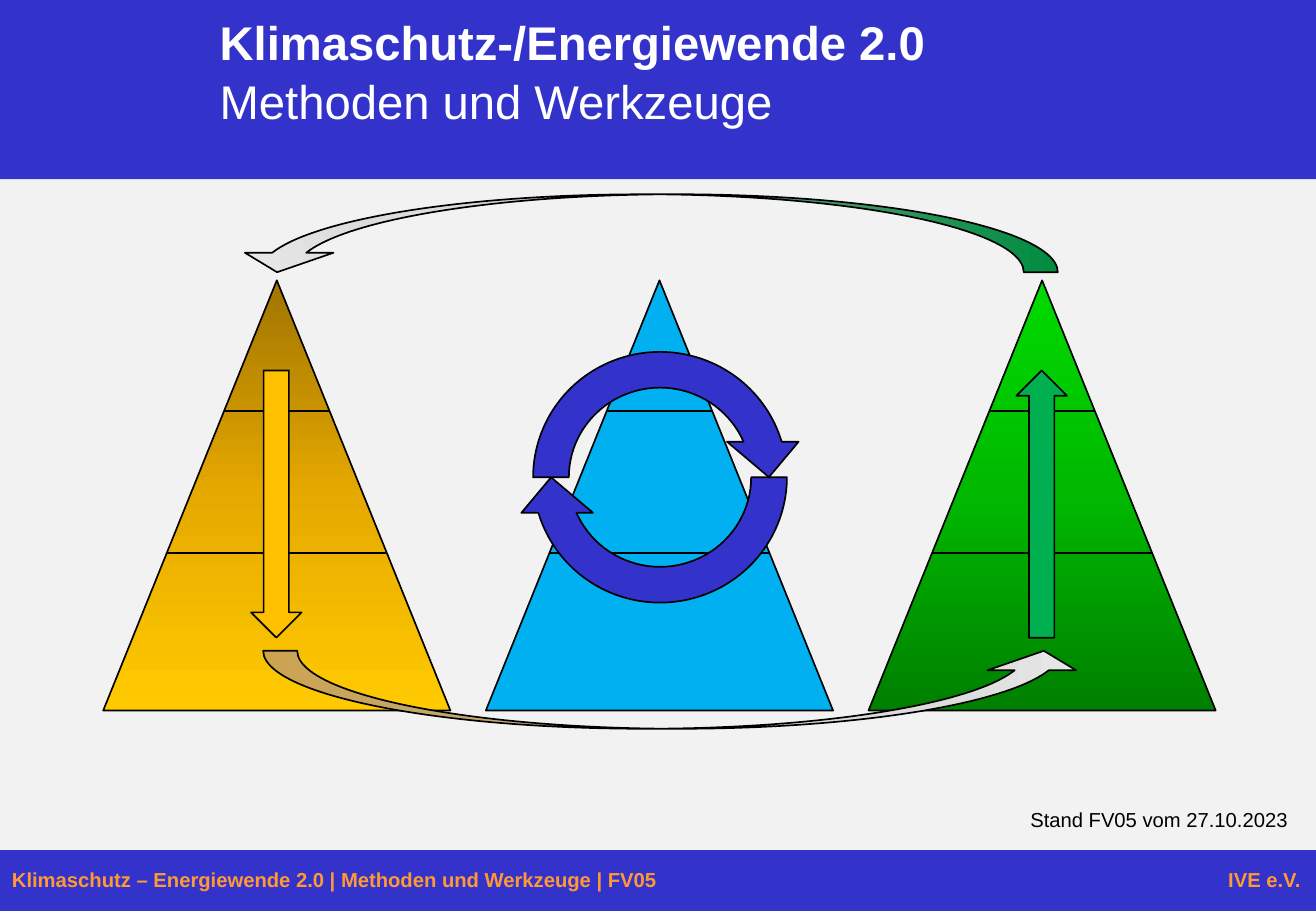
"""Build the title slide on methods and tools for the energy transition."""
from copy import deepcopy
from dataclasses import dataclass

from lxml import etree
from pptx import Presentation
from pptx.dml.color import RGBColor
from pptx.enum.shapes import MSO_CONNECTOR, MSO_SHAPE
from pptx.enum.text import MSO_ANCHOR, PP_ALIGN
from pptx.oxml.ns import qn
from pptx.util import Emu, Pt

EMU_PER_PX = 7620
PAGE_WIDTH, PAGE_HEIGHT = 1300, 900
TITLE_ONLY = 5

RECTANGLE = MSO_SHAPE.RECTANGLE
TRIANGLE = MSO_SHAPE.ISOSCELES_TRIANGLE
DOWN_ARROW = MSO_SHAPE.DOWN_ARROW
CIRCULAR_ARROW = MSO_SHAPE.CIRCULAR_ARROW
CURVED_ARROW = MSO_SHAPE.CURVED_UP_ARROW
STRAIGHT = MSO_CONNECTOR.STRAIGHT
TOP = MSO_ANCHOR.TOP
LEFT = PP_ALIGN.LEFT


@dataclass(frozen=True)
class Gradient:
    """Stops as (percent, colour) and a clockwise angle."""
    stops: tuple[tuple[int, str], ...]
    angle: int = 0


Fill = str | Gradient
SILVER = ((74, "DCDCDC"), (83, "DCDCDC"), (100, "E8E8E8"))


@dataclass(frozen=True)
class Theme:
    """Colours, font and type sizes of the slide."""
    font: str = "Arial"
    title_size: int = 28
    small_size: int = 12
    band: str = "3333CC"
    body: str = "F2F2F2"
    white: str = "FFFFFF"
    black: str = "000000"
    orange: str = "FF9933"
    blue: str = "00B0F0"
    yellow_arrow: str = "FFC000"
    green_arrow: str = "00B050"
    gold: Gradient = Gradient(((0, "A07400"), (50, "E6A900"), (100, "FFCA00")), 90)
    green: Gradient = Gradient(((0, "007F00"), (50, "00B800"), (100, "00DB00")), 270)
    lower_curve: Gradient = Gradient(((0, "FFCC66"), *SILVER))
    upper_curve: Gradient = Gradient(((0, "00B050"), *SILVER))


THEME = Theme()


@dataclass(frozen=True)
class Box:
    """A rectangle in px."""
    left: int
    top: int
    width: int
    height: int

    def emu(self) -> tuple[Emu, ...]:
        """Return the rectangle in EMU."""
        return tuple(map(px, (self.left, self.top, self.width, self.height)))


@dataclass(frozen=True)
class Pyramid:
    """A three-level pyramid with an optional vertical arrow."""
    fill: Fill
    column: int
    arrow_fill: str = ""
    arrow_rotation: int = 0


PYRAMIDS = (
    Pyramid(THEME.gold, 0, THEME.yellow_arrow),
    Pyramid(THEME.green, 2, THEME.green_arrow, 180),
    Pyramid(THEME.blue, 1),
)
PYRAMID_LEFT, PYRAMID_TOP, PYRAMID_PITCH = 102, 277, 378
PYRAMID_WIDTH, PYRAMID_HEIGHT = 343, 425
LEVEL_DEPTHS = (129, 269)
CYCLE = Box(509, 330, 286, 283)
CURVES = (
    (Box(260, 643, 815, 77), THEME.lower_curve, False),
    (Box(230, 192, 815, 77), THEME.upper_curve, True),
)


def px(length: int) -> Emu:
    """Turn px into EMU."""
    return Emu(length * EMU_PER_PX)


def paint(shape, fill: Fill) -> None:
    """Fill a shape with one colour or a gradient."""
    if isinstance(fill, str):
        shape.fill.solid()
        shape.fill.fore_color.rgb = RGBColor.from_string(fill)
        return
    shape.fill.gradient()
    shape.fill.gradient_angle = (360 - fill.angle) % 360
    stop_list = shape._element.spPr.find(qn("a:gradFill")).find(qn("a:gsLst"))
    for stop in list(stop_list):
        stop_list.remove(stop)
    for percent, colour in fill.stops:
        stop = etree.SubElement(stop_list, qn("a:gs"), pos=str(percent * 1000))
        etree.SubElement(stop, qn("a:srgbClr"), val=colour)


def outline(line) -> None:
    """Give a line the common black stroke."""
    line.color.rgb = RGBColor.from_string(THEME.black)
    line.width = Pt(1)


def draw_shape(shapes, kind, box: Box, fill: Fill, *, outlined: bool = True,
               rotation: int = 0, flipped: bool = False,
               adjustments: tuple[float, ...] = ()) -> None:
    """Draw a preset shape."""
    shape = shapes.add_shape(kind, *box.emu())
    shape.shadow.inherit = False
    shape.rotation = rotation
    for index, value in enumerate(adjustments):
        shape.adjustments[index] = value
    paint(shape, fill)
    if outlined:
        outline(shape.line)
    else:
        shape.line.fill.background()
    if flipped:
        for axis in ("flipH", "flipV"):
            shape._element.spPr.xfrm.set(axis, "1")


def draw_pyramid(page, pyramid: Pyramid) -> None:
    """Draw a pyramid, its level lines and its arrow."""
    left = PYRAMID_LEFT + pyramid.column * PYRAMID_PITCH
    group = page.shapes.add_group_shape()
    draw_shape(group.shapes, TRIANGLE,
               Box(left, PYRAMID_TOP, PYRAMID_WIDTH, PYRAMID_HEIGHT), pyramid.fill)
    for depth in LEVEL_DEPTHS:
        inset = round(PYRAMID_WIDTH / 2 * (1 - depth / PYRAMID_HEIGHT))
        level = px(PYRAMID_TOP + depth)
        line = group.shapes.add_connector(
            STRAIGHT, px(left + inset), level, px(left + PYRAMID_WIDTH - inset), level)
        outline(line.line)
        etree.SubElement(line._element.spPr, qn("a:effectLst"))
    if pyramid.arrow_fill:
        draw_shape(page.shapes, DOWN_ARROW, Box(left + 146, 366, 50, 264),
                   pyramid.arrow_fill, rotation=pyramid.arrow_rotation)


def add_span(paragraph, text: str, *, size: int, colour: str, bold: bool = False):
    """Add formatted text to a paragraph."""
    span = paragraph.add_run()
    span.text = text
    span.font.name = THEME.font
    span.font.size = Pt(size)
    span.font.bold = bold
    span.font.color.rgb = RGBColor.from_string(colour)
    return span


def write_title(page) -> None:
    """Place the two-line title above the header band."""
    title = page.shapes.title
    page.shapes._spTree.append(title._element)
    title.left, title.top, title.width, title.height = Box(205, 4, 1095, 125).emu()
    title.text_frame.vertical_anchor = TOP
    paragraph = title.text_frame.paragraphs[0]
    paragraph.alignment = LEFT
    paragraph.line_spacing = 1.05
    style = {"size": THEME.title_size, "colour": THEME.white}
    first = add_span(paragraph, "Klimaschutz-/Energiewende 2.0", bold=True, **style)
    paragraph.add_line_break()
    paragraph._p[-1].append(deepcopy(first._r.rPr))
    add_span(paragraph, "Methoden und Werkzeuge", **style)


def write_text(page, box: Box, text: str, *, colour: str, bold: bool = False,
               wrap: bool = True, right_tab: int = 0) -> None:
    """Write a small line of text, with an optional right tab."""
    frame = page.shapes.add_textbox(*box.emu()).text_frame
    frame.word_wrap = wrap
    paragraph = frame.paragraphs[0]
    if right_tab:
        tabs = etree.SubElement(paragraph._p.get_or_add_pPr(), qn("a:tabLst"))
        etree.SubElement(tabs, qn("a:tab"), pos=str(px(right_tab)), algn="r")
    add_span(paragraph, text, size=THEME.small_size, colour=colour, bold=bold)


def main() -> None:
    """Build and save the deck."""
    deck = Presentation()
    deck.slide_width, deck.slide_height = px(PAGE_WIDTH), px(PAGE_HEIGHT)
    page = deck.slides.add_slide(deck.slide_layouts[TITLE_ONLY])
    draw_shape(page.shapes, RECTANGLE, Box(0, 176, PAGE_WIDTH, 672), THEME.body, outlined=False)
    draw_shape(page.shapes, RECTANGLE, Box(0, 0, PAGE_WIDTH, 177), THEME.band, outlined=False)
    write_title(page)
    for pyramid in PYRAMIDS:
        draw_pyramid(page, pyramid)
    cycle = page.shapes.add_group_shape()
    for rotation in (180, 0):
        draw_shape(cycle.shapes, CIRCULAR_ARROW, CYCLE, THEME.band, rotation=rotation)
    for box, fill, flipped in CURVES:
        draw_shape(page.shapes, CURVED_ARROW, box, fill, flipped=flipped,
                   adjustments=(0.437, 1.137, 0.25))
    draw_shape(page.shapes, RECTANGLE, Box(0, 840, PAGE_WIDTH, 60), THEME.band, outlined=False)
    write_text(page, Box(0, 851, PAGE_WIDTH, 36),
               "Klimaschutz – Energiewende 2.0 | Methoden und Werkzeuge | FV05\tIVE e.V.",
               colour=THEME.orange, bold=True, right_tab=1273)
    write_text(page, Box(1006, 792, 281, 36), "Stand FV05 vom 27.10.2023",
               colour=THEME.black, wrap=False)
    deck.save("out.pptx")


if __name__ == "__main__":
    main()
